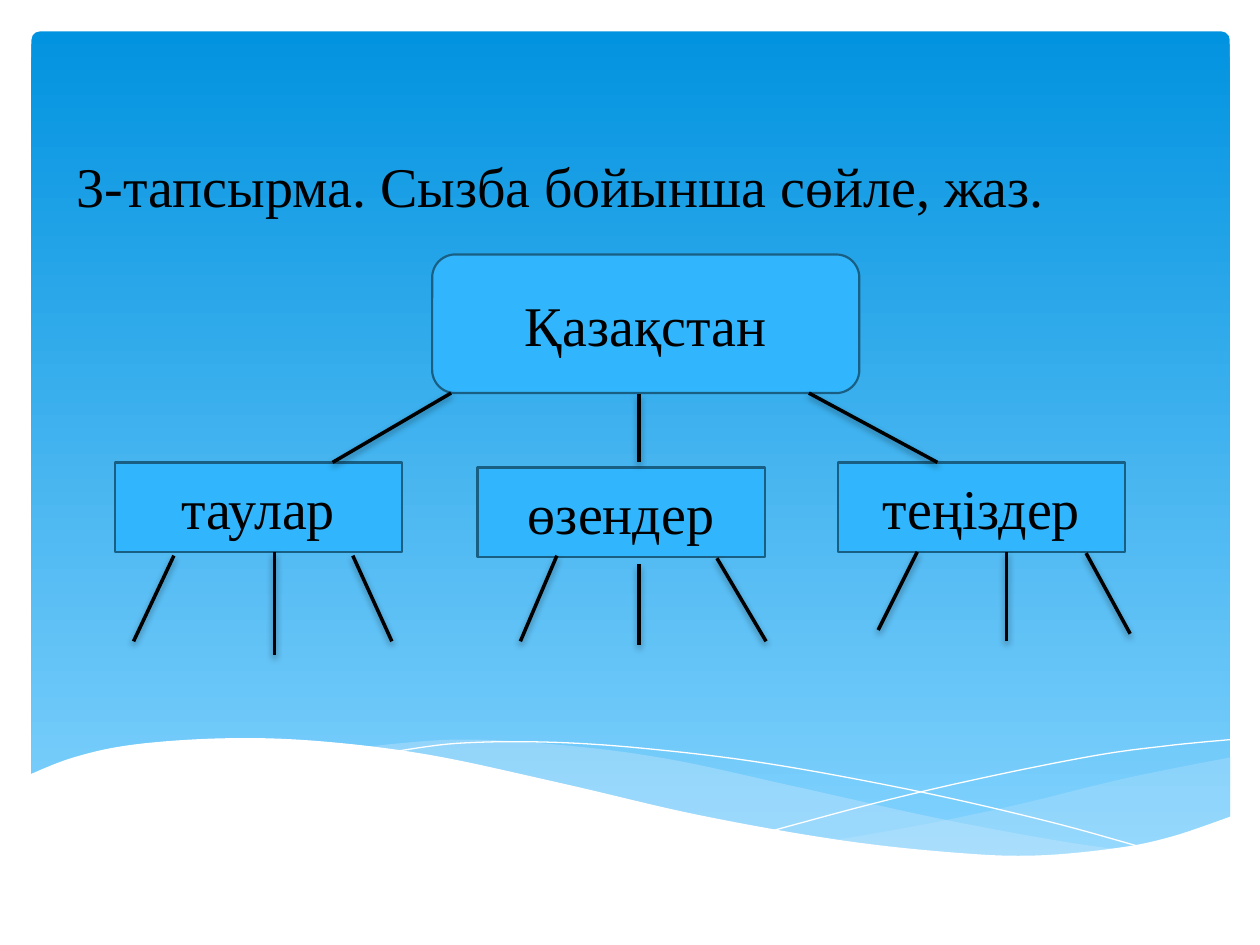
from dataclasses import dataclass

from lxml import etree
from pptx import Presentation
from pptx.dml.color import RGBColor
from pptx.enum.shapes import MSO_CONNECTOR, MSO_SHAPE
from pptx.enum.text import MSO_ANCHOR, PP_ALIGN
from pptx.oxml import parse_xml
from pptx.oxml.ns import nsdecls, qn
from pptx.util import Emu, Inches, Pt

RECT, ROUND = MSO_SHAPE.RECTANGLE, MSO_SHAPE.ROUNDED_RECTANGLE
LINE = MSO_CONNECTOR.STRAIGHT
LEFT, CENTER = PP_ALIGN.LEFT, PP_ALIGN.CENTER
TOP, MIDDLE = MSO_ANCHOR.TOP, MSO_ANCHOR.MIDDLE

Point = tuple[float, float]


@dataclass(frozen=True)
class Theme:
    sky: str = "0293E0"
    pale: str = "83D3FE"
    veil: str = "C6E7FC"
    box: str = "31B6FD"
    edge: str = "195F84"
    white: str = "FFFFFF"
    ink: str = "000000"
    font: str = "Times New Roman"
    size: float = 32
    rim: float = 1.25
    stroke: float = 2


@dataclass(frozen=True)
class Node:
    text: str
    kind: int
    col: float
    row: float
    wide: float
    high: float


@dataclass(frozen=True)
class Wave:
    top: list[Point]
    base: list[Point]
    fill: str = ""
    alpha: int = 100


THEME = Theme()
COLS, ROWS = 100, 75  # grid over the whole slide
WIDE, HIGH = Inches(10), Inches(7.5)

# Background waves, back to front; a wave without fill is a thin line
WAVES = [
    Wave([(66.2, 66.7), (73, 65.5), (80.6, 63.9), (89.2, 61.8), (97.7, 60.1)],
         [(97.7, 64.9), (92.2, 66.7), (85.5, 67.8), (77, 67.8), (66.2, 66.7)],
         THEME.veil, 29),
    Wave([(28.7, 59.3), (36.2, 58.7), (44.2, 59.1), (52.8, 60.2), (63, 62.4),
          (74.2, 64.9), (83.8, 66.7), (89.4, 67.5)],
         [(89.4, 67.5), (81.9, 68), (72.3, 67.6), (60.2, 65.7), (45, 62.4),
          (36.3, 60.4), (28.7, 59.3)],
         THEME.veil, 40),
    Wave([(31, 59.7), (36.3, 59), (43.3, 58.9), (51.1, 59.4), (60.9, 60.6),
          (72.8, 62.8), (83.2, 65.2), (90.8, 67.3)], []),
    Wave([(61.4, 65.9), (69.6, 63.7), (77.7, 61.8), (86.7, 60), (92.5, 59.2),
          (97.6, 58.7)], []),
    Wave([(2.3, 61.5), (5.9, 60.1), (10.6, 59.1), (17.7, 58.6), (25, 58.8),
          (34, 59.9), (44.7, 62.2), (55.5, 64.7), (66.8, 66.7), (76.1, 67.7),
          (82.3, 67.9), (88.7, 67.3), (93, 66.4), (97.7, 64.8)],
         [(97.7, 73.1), (2.3, 73.1)], THEME.white),
]

ROOT = Node("Қазақстан", ROUND, 34.3, 20.2, 33.9, 11)
LEAVES = [
    Node("таулар", RECT, 9.1, 36.7, 22.8, 7.1),
    Node("өзендер", RECT, 37.9, 37.1, 22.8, 7.1),
    Node("теңіздер", RECT, 66.5, 36.7, 22.8, 7.1),
]

# Each link: start column, start row, end column, end row
LINKS = [
    (35.8, 31.2, 26.4, 36.7), (50.7, 31.3, 50.7, 36.7), (64.2, 31.2, 74.4, 36.7),
    (13.8, 44.1, 10.6, 50.9), (21.8, 43.8, 21.8, 52), (28, 44.1, 31.1, 50.9),
    (44.2, 44.1, 41.3, 50.9), (50.7, 44.8, 50.7, 51.2), (56.9, 44.3, 60.8, 50.9),
    (72.8, 43.8, 69.7, 50), (79.9, 43.8, 79.9, 50.9), (86.2, 43.9, 89.7, 50.3),
]


def x(col: float) -> Emu:
    return Emu(round(WIDE * col / COLS))


def y(row: float) -> Emu:
    return Emu(round(HIGH * row / ROWS))


def rgb(code: str) -> RGBColor:
    return RGBColor.from_string(code)


def smooth(knots: list[Point], steps: int = 8) -> list[Point]:
    """Points on a Catmull-Rom curve through the knots."""
    pad = [knots[0], *knots, knots[-1]]
    out = [knots[0]]
    for a, b, c, d in zip(pad, pad[1:], pad[2:], pad[3:]):
        for k in range(1, steps + 1):
            t = k / steps
            out.append(tuple(
                q + t / 2 * (r - p + t * (2 * p - 5 * q + 4 * r - s
                                          + t * (3 * q - p - 3 * r + s)))
                for p, q, r, s in zip(a, b, c, d)))
    return out


def write(shape, text: str, align: int, anchor: int) -> None:
    frame = shape.text_frame
    frame.word_wrap = True
    frame.vertical_anchor = anchor
    para = frame.paragraphs[0]
    para.alignment = align
    run = para.add_run()
    run.text = text
    run.font.name, run.font.size = THEME.font, Pt(THEME.size)
    run.font.color.rgb = rgb(THEME.ink)


def draw_sky(shapes) -> None:
    sky = shapes.add_shape(ROUND, x(2.5), y(2.5), x(95.1), y(66))
    sky.adjustments[0] = 0.01
    sky.shadow.inherit = False
    sky.line.fill.background()
    sky.fill.gradient()
    sky.fill.gradient_angle = 270
    for stop, code, place in zip(sky.fill.gradient_stops,
                                 (THEME.sky, THEME.pale), (0, 1)):
        stop.color.rgb = rgb(code)
        stop.position = place


def draw_wave(shapes, wave: Wave) -> None:
    base = smooth(wave.base) if len(wave.base) > 2 else wave.base
    first, *rest = [(x(c), y(r)) for c, r in smooth(wave.top) + base]
    pen = shapes.build_freeform(*first)
    pen.add_line_segments(rest, close=bool(wave.fill))
    form = pen.convert_to_shape()
    form.shadow.inherit = False
    if not wave.fill:
        form.fill.background()
        form.line.color.rgb = rgb(THEME.white)
        form.line.width = Pt(0)
        return
    form.line.fill.background()
    form.fill.solid()
    form.fill.fore_color.rgb = rgb(wave.fill)
    tint = form.fill._xPr.find(qn("a:solidFill"))[0]
    etree.SubElement(tint, qn("a:alpha")).set("val", str(wave.alpha * 1000))


def draw_node(shapes, node: Node) -> None:
    box = shapes.add_shape(node.kind, x(node.col), y(node.row),
                           x(node.wide), y(node.high))
    box.shadow.inherit = False
    box.fill.solid()
    box.fill.fore_color.rgb = rgb(THEME.box)
    box.line.color.rgb = rgb(THEME.edge)
    box.line.width = Pt(THEME.rim)
    write(box, node.text, CENTER, MIDDLE)


def draw_link(shapes, c1: float, r1: float, c2: float, r2: float) -> None:
    link = shapes.add_connector(LINE, x(c1), y(r1), x(c2), y(r2))
    link.line.color.rgb = rgb(THEME.ink)
    link.line.width = Pt(THEME.stroke)
    link._element.spPr.append(parse_xml(
        f'<a:effectLst {nsdecls("a")}><a:outerShdw blurRad="{Pt(4)}" '
        f'dist="{Pt(2)}" dir="5400000" rotWithShape="0">'
        f'<a:srgbClr val="{THEME.ink}"><a:alpha val="38000"/></a:srgbClr>'
        '</a:outerShdw></a:effectLst>'))


def main() -> None:
    deck = Presentation()
    deck.slide_width, deck.slide_height = WIDE, HIGH
    shapes = deck.slides.add_slide(deck.slide_layouts[6]).shapes

    # Background
    draw_sky(shapes)
    for wave in WAVES:
        draw_wave(shapes, wave)

    # Task heading
    head = shapes.add_textbox(x(5.1), y(11.5), x(92.1), y(57.6))
    write(head, "3-тапсырма. Сызба бойынша сөйле, жаз.", LEFT, TOP)

    # Diagram
    for node in [ROOT, *LEAVES]:
        draw_node(shapes, node)
    for link in LINKS:
        draw_link(shapes, *link)

    deck.save("out.pptx")


if __name__ == "__main__":
    main()
